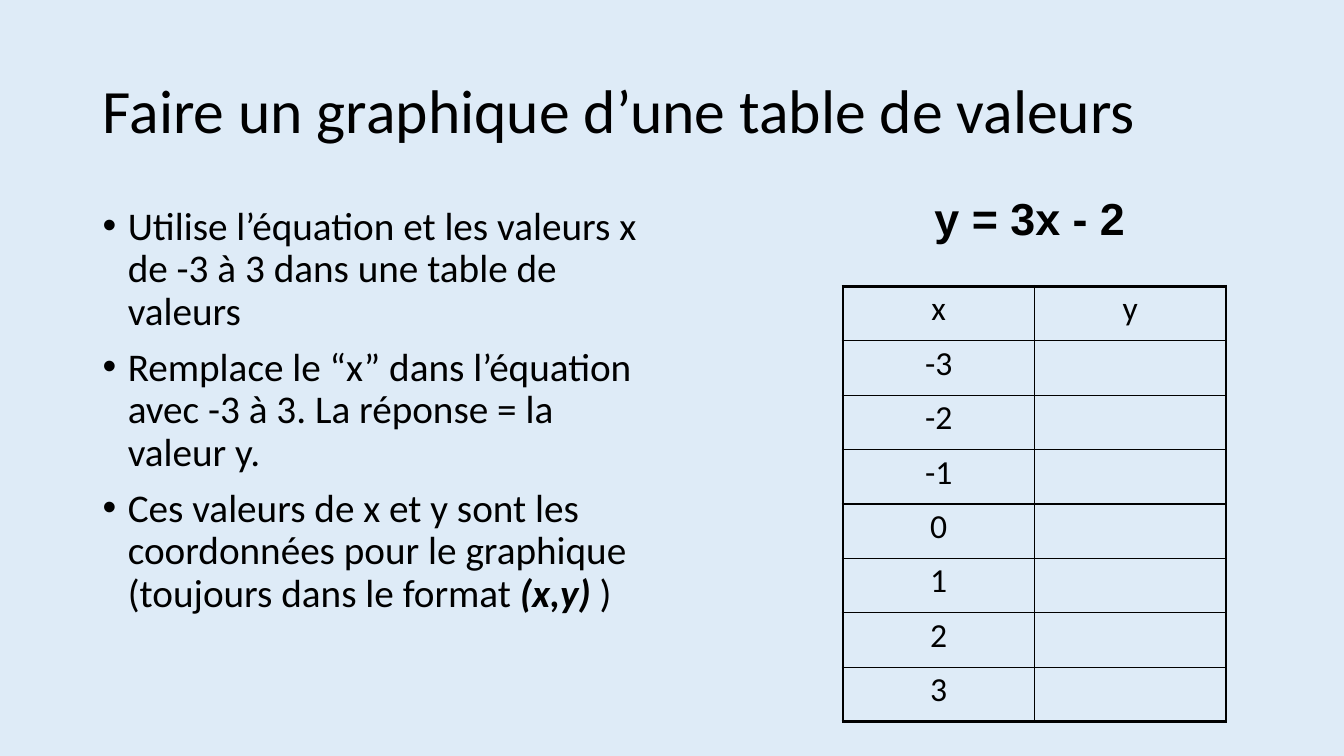
from lxml.etree import SubElement
from pptx import Presentation
from pptx.dml.color import RGBColor
from pptx.enum.text import MSO_ANCHOR, PP_ALIGN
from pptx.oxml.ns import qn
from pptx.util import Inches, Pt


def color(hex_text):
    """Turn a hex string into a colour."""
    return RGBColor.from_string(hex_text)


class Sheet:
    """Hold the style and the current slide."""

    ink = "000000"
    face = "Calibri"
    thin, thick = 1, 2.25

    def __init__(self, deck, background):
        """Add a title-only slide with a plain background."""
        self.page = deck.slides.add_slide(deck.slide_layouts[5])
        self.page.background.fill.solid()
        self.page.background.fill.fore_color.rgb = color(background)

    def style(self, para, size, face=None, bold=False):
        """Set the font of a whole paragraph."""
        para.font.name = face or self.face
        para.font.size = Pt(size)
        para.font.bold = bold
        para.font.color.rgb = color(self.ink)

    def space(self, para):
        """Apply the line spacing shared by the list and the table."""
        para.line_spacing = 0.9
        para.space_before = Pt(10)

    def title(self, text, left, top, width, height):
        """Place and format the slide title."""
        box = self.page.shapes.title
        box.left, box.top = Inches(left), Inches(top)
        box.width, box.height = Inches(width), Inches(height)
        box.text_frame.text = text
        box.text_frame.vertical_anchor = MSO_ANCHOR.MIDDLE
        para = box.text_frame.paragraphs[0]
        para.alignment = PP_ALIGN.LEFT
        para.line_spacing = 0.9
        self.style(para, 44)

    def text_frame(self, left, top, width, height):
        """Add a wrapping text box and return its frame."""
        box = self.page.shapes.add_textbox(
            Inches(left), Inches(top), Inches(width), Inches(height))
        box.text_frame.word_wrap = True
        return box.text_frame

    def bullets(self, items, left, top, width, height):
        """Add a bulleted list whose items are (text, emphasised) spans."""
        frame = self.text_frame(left, top, width, height)
        for index, spans in enumerate(items):
            para = frame.add_paragraph() if index else frame.paragraphs[0]
            self.style(para, 28)
            self.space(para)
            for text, emphasised in spans:
                span = para.add_run()
                span.text = text
                if emphasised:
                    span.font.bold = span.font.italic = True
            properties = para._p.get_or_add_pPr()
            properties.set("marL", str(Inches(0.25)))
            properties.set("indent", str(-Inches(0.25)))
            font = SubElement(properties, qn("a:buFont"), typeface="Arial")
            font.addnext(properties.makeelement(qn("a:buChar"), char="•"))
            properties.append(properties.find(qn("a:defRPr")))

    def equation(self, text, left, top, width, height):
        """Add the equation in bold."""
        para = self.text_frame(left, top, width, height).paragraphs[0]
        para.text = text
        self.style(para, 32, "Arial", True)

    def border(self, cell, widths):
        """Draw the left, right, top and bottom lines of a cell."""
        properties = cell._tc.get_or_add_tcPr()
        for side, width in zip("LRTB", widths):
            line = SubElement(properties, qn(f"a:ln{side}"), w=str(Pt(width)))
            fill = SubElement(line, qn("a:solidFill"))
            SubElement(fill, qn("a:srgbClr"), val=self.ink)

    def table(self, rows, left, top, column_width, row_height):
        """Add an unfilled table with a thick outer frame."""
        last_row, last_column = len(rows) - 1, len(rows[0]) - 1
        table = self.page.shapes.add_table(
            len(rows), len(rows[0]), Inches(left), Inches(top),
            Inches(column_width * len(rows[0])),
            Inches(row_height * len(rows))).table
        table.first_row = table.horz_banding = False
        for r, values in enumerate(rows):
            table.rows[r].height = Inches(row_height)
            for c, value in enumerate(values):
                cell = table.cell(r, c)
                cell.text = value
                para = cell.text_frame.paragraphs[0]
                para.alignment = PP_ALIGN.CENTER
                self.style(para, 24)
                self.space(para)
                outer = (c == 0, c == last_column, r == 0, r == last_row)
                self.border(cell, [self.thick if edge else self.thin
                                   for edge in outer])
                cell.fill.background()


def main():
    """Build and save the slide."""
    deck = Presentation()
    deck.slide_width, deck.slide_height = Inches(13.33), Inches(7.5)
    sheet = Sheet(deck, "DEEBF7")
    sheet.title("Faire un graphique d’une table de valeurs",
                0.92, 0.4, 11.5, 1.45)
    sheet.bullets([
        [("Utilise l’équation et les valeurs x de -3 à 3 dans une table "
          "de valeurs", False)],
        [("Remplace le “x” dans l’équation avec -3 à 3. La réponse = la "
          "valeur y.", False)],
        [("Ces valeurs de x et y sont les coordonnées pour le graphique "
          "(toujours dans le format ", False), ("(x,y)", True), (" )", False)],
    ], 0.92, 2, 5.67, 4.76)
    rows = [("x", "y")] + [(str(x), "") for x in range(-3, 4)]
    sheet.table(rows, 8.36, 2.84, 1.9, 0.54)
    sheet.equation("y = 3x - 2", 9.17, 1.84, 2.97, 0.63)
    deck.save("out.pptx")


if __name__ == "__main__":
    main()
